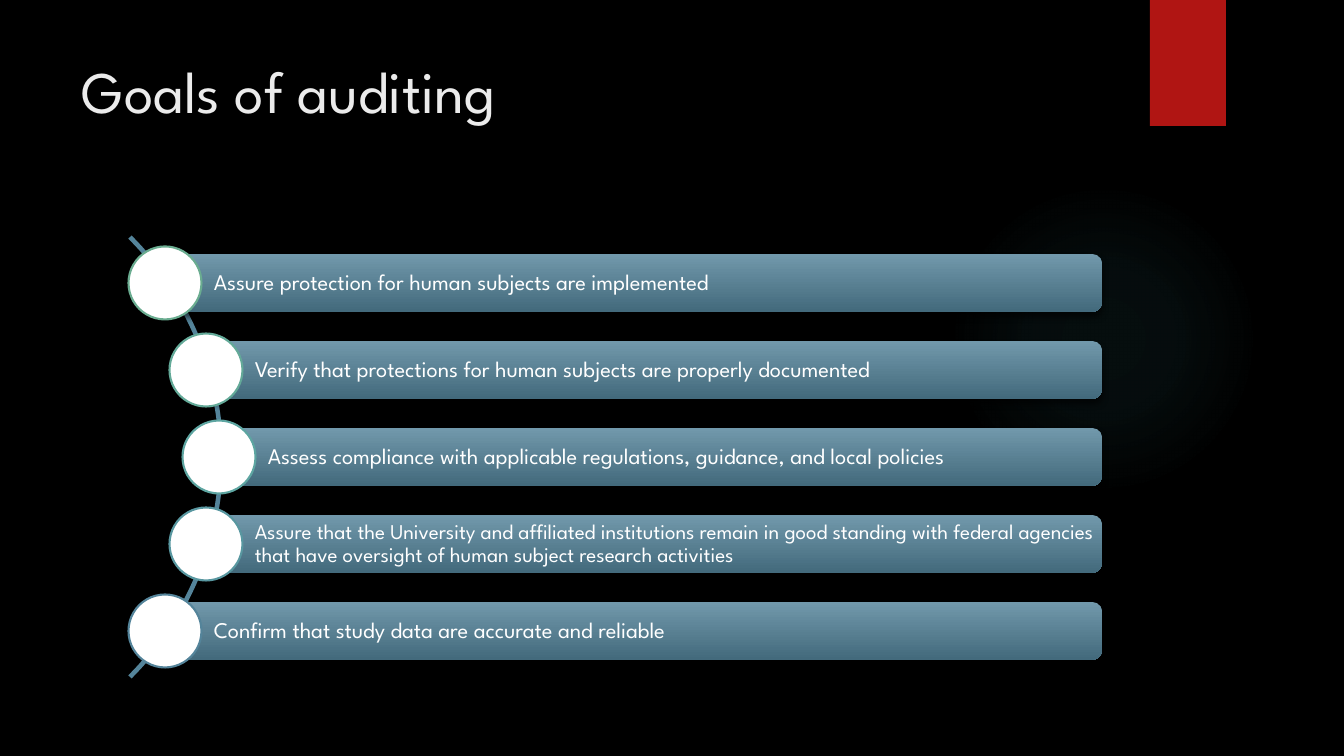
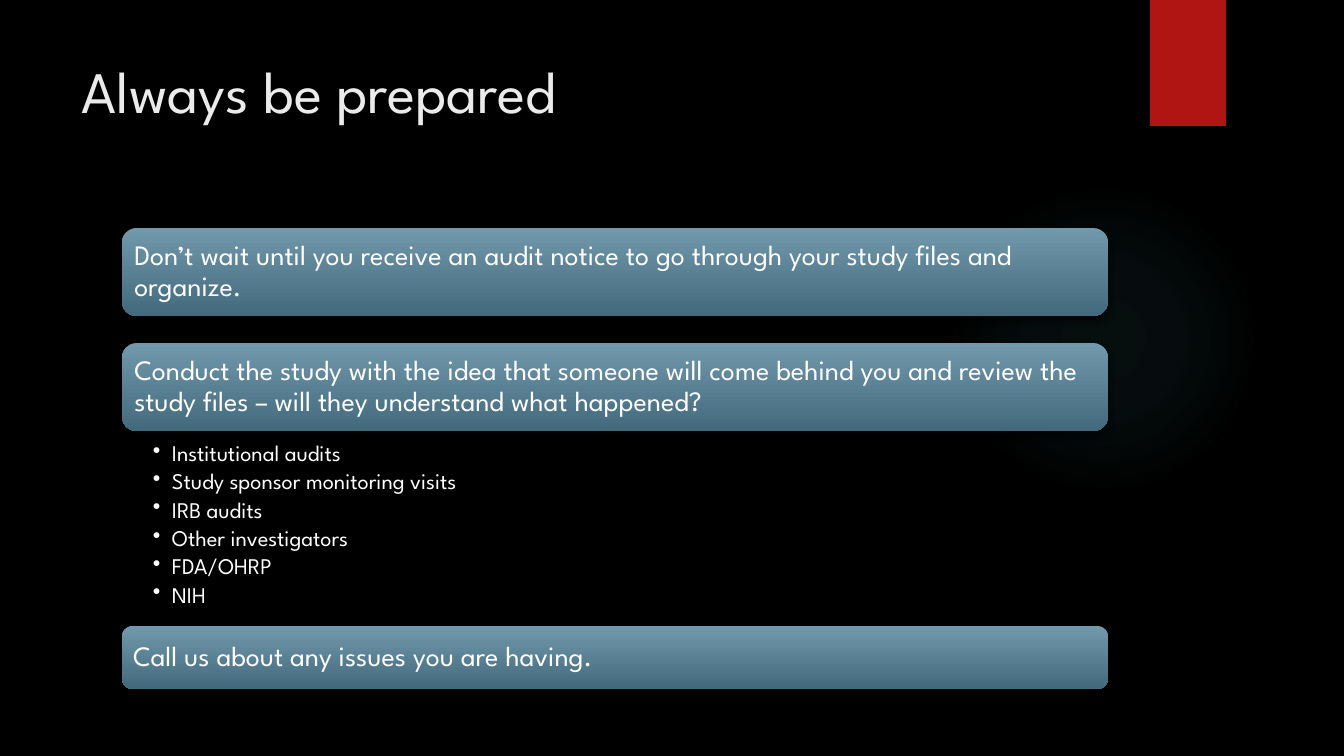
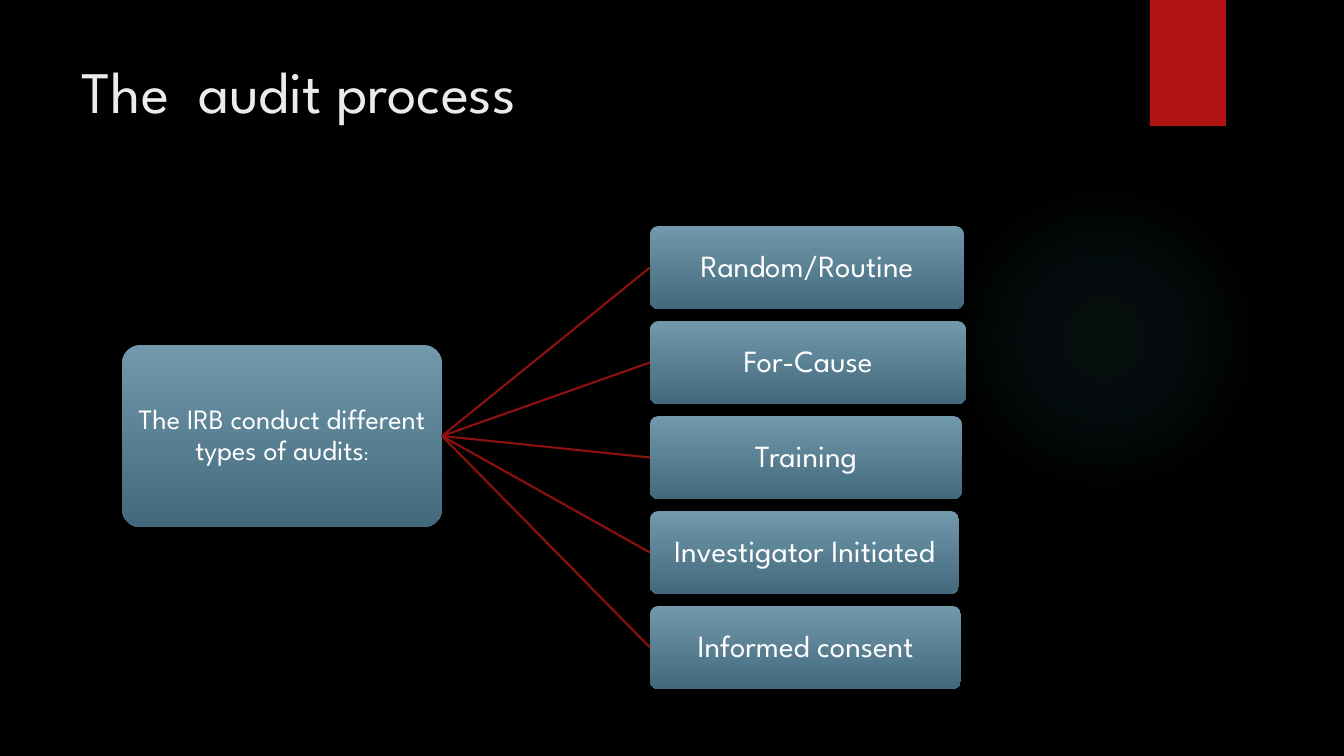
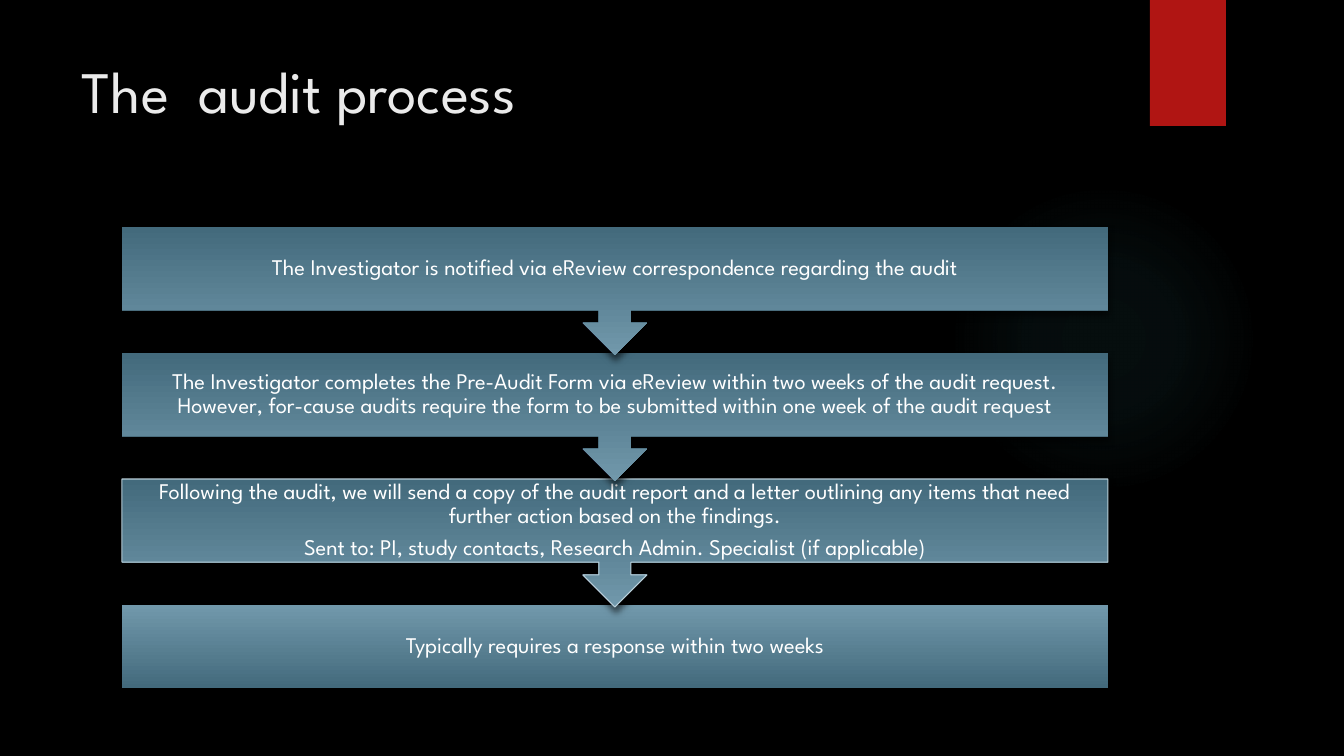
from math import cos, radians, sin, sqrt

from pptx import Presentation
from pptx.dml.color import RGBColor
from pptx.enum.shapes import MSO_CONNECTOR, MSO_SHAPE
from pptx.enum.text import MSO_ANCHOR, PP_ALIGN
from pptx.oxml import parse_xml
from pptx.oxml.ns import nsdecls, qn
from pptx.util import Pt

EMU_PER_PX = 914400 / 100.8
FONT = "League Spartan"
BLACK, WHITE, TITLE_GREY = "000000", "FFFFFF", "EBEBEB"
RED, DARK_RED = "B01513", "8D110F"
LIGHT_BLUE, DARK_BLUE, ARC_BLUE, PALE_BLUE = "7198AB", "436A7C", "54849A", "B9CFD9"
GLOW, GLOW_STOPS = "50B9C1", [(0, 7), (36, 6), (69, 0)]
LEFT, CENTER = PP_ALIGN.LEFT, PP_ALIGN.CENTER
TOP, MIDDLE = MSO_ANCHOR.TOP, MSO_ANCHOR.MIDDLE
RECTANGLE, ROUNDED = MSO_SHAPE.RECTANGLE, MSO_SHAPE.ROUNDED_RECTANGLE
OVAL, CALLOUT = MSO_SHAPE.OVAL, MSO_SHAPE.DOWN_ARROW_CALLOUT
STRAIGHT = MSO_CONNECTOR.STRAIGHT
CONTENT_LEFT, CONTENT_WIDTH = 122, 986


def px(value):
    return round(value * EMU_PER_PX)


def rgb(value):
    return RGBColor.from_string(value)


def set_line(shape, color, width):
    if color:
        shape.line.color.rgb = rgb(color)
        shape.line.width = Pt(width)
    else:
        shape.line.fill.background()


def add_shadow(shape, alpha, blur, distance):
    effects = shape._element.spPr.find(qn("a:effectLst"))
    effects.append(parse_xml(
        f'<a:outerShdw {nsdecls("a")} blurRad="{Pt(blur)}" dist="{Pt(distance)}" '
        f'dir="5400000" rotWithShape="0"><a:srgbClr val="{BLACK}">'
        f'<a:alpha val="{alpha * 1000}"/></a:srgbClr></a:outerShdw>'))


def add_figure(page, kind, left, top, width, height, fill=None, line=None, line_width=1.5):
    shape = page.shapes.add_shape(kind, px(left), px(top), px(width), px(height))
    shape.shadow.inherit = False
    if fill:
        shape.fill.solid()
        shape.fill.fore_color.rgb = rgb(fill)
    else:
        shape.fill.background()
    set_line(shape, line, line_width)
    return shape


def add_panel(page, kind, left, top, width, height,
              colors=(LIGHT_BLUE, DARK_BLUE), corner=None, line=None):
    panel = add_figure(page, kind, left, top, width, height, line=line, line_width=0.75)
    panel.fill.gradient()
    panel.fill.gradient_angle = 270
    for stop, color in zip(panel.fill.gradient_stops, colors):
        stop.color.rgb = rgb(color)
    if corner:
        panel.adjustments[0] = corner
    add_shadow(panel, 60, 5, 3)
    return panel


def add_bullet(para, indent):
    properties = para._p.get_or_add_pPr()
    properties.set("marL", str(px(indent)))
    properties.set("indent", str(-px(indent)))
    properties.append(parse_xml(f'<a:buChar {nsdecls("a")} char="•"/>'))


def write(shape, paragraphs, size=16, color=WHITE, align=LEFT, anchor=MIDDLE,
          insets=(0, 0, 0, 0), spacing=0.9, after=0, bullet_indent=0):
    frame = shape.text_frame
    frame.word_wrap = True
    frame.vertical_anchor = anchor
    frame.margin_left, frame.margin_top, frame.margin_right, frame.margin_bottom = map(px, insets)
    for index, content in enumerate(paragraphs):
        para = frame.add_paragraph() if index else frame.paragraphs[0]
        if bullet_indent:
            add_bullet(para, bullet_indent)
        para.alignment = align
        para.line_spacing = spacing
        para.space_after = Pt(after if index < len(paragraphs) - 1 else 0)
        spans = [(content, size)] if isinstance(content, str) else content
        for text, span_size in spans:
            span = para.add_run()
            span.text = text
            span.font.name = FONT
            span.font.size = Pt(span_size)
            span.font.color.rgb = rgb(color)


def add_text(page, left, top, width, height, paragraphs, **style):
    box = page.shapes.add_textbox(px(left), px(top), px(width), px(height))
    write(box, paragraphs, **style)


def add_glow(page):
    glow = add_figure(page, OVAL, 949, 184, 310, 310)
    stops = "".join(
        f'<a:gs pos="{position * 1000}"><a:srgbClr val="{GLOW}">'
        f'<a:alpha val="{alpha * 1000}"/></a:srgbClr></a:gs>'
        for position, alpha in GLOW_STOPS)
    properties = glow._element.spPr
    properties.replace(properties.find(qn("a:noFill")), parse_xml(
        f'<a:gradFill {nsdecls("a")}><a:gsLst>{stops}</a:gsLst><a:path path="circle">'
        '<a:fillToRect l="50000" t="50000" r="50000" b="50000"/></a:path></a:gradFill>'))


def add_page(deck, title):
    page = deck.slides.add_slide(deck.slide_layouts[6])
    add_glow(page)
    ribbon = add_figure(page, RECTANGLE, 1150, 0, 76, 126, RED)
    add_shadow(ribbon, 45, 3, 2)
    add_text(page, 72, 50, 1037, 154, [title], size=42, color=TITLE_GREY,
             anchor=TOP, insets=(10, 5, 10, 5), spacing=1.0)
    return page


def add_arc(page, center_x, center_y, radius):
    points = [(px(center_x + radius * cos(radians(angle))),
               px(center_y + radius * sin(radians(angle)))) for angle in range(-45, 46)]
    builder = page.shapes.build_freeform(*points[0])
    builder.add_line_segments(points[1:], close=False)
    arc = builder.convert_to_shape()
    arc.shadow.inherit = False
    arc.fill.background()
    set_line(arc, ARC_BLUE, 3.25)


def build_goals(deck):
    page = add_page(deck, "Goals of auditing")
    goals = [
        ("Assure protection for human subjects are implemented", 16, "6AAC90"),
        ("Verify that protections for human subjects are properly documented", 16, "63A998"),
        ("Assess compliance with applicable regulations, guidance, and local policies",
         16, "5DA5A1"),
        ("Assure that the University and affiliated institutions remain in good standing with "
         "federal agencies that have oversight of human subject research activities",
         15, "5897A0"),
        ("Confirm that study data are accurate and reliable", 16, ARC_BLUE),
    ]
    center_x, center_y, radius, pitch = -90, 457, 309, 87
    bar_right, bar_height, dot = 1102, 58, 73
    add_arc(page, center_x, center_y, radius + 2)
    for index, (goal, size, color) in enumerate(goals):
        offset = pitch * (index - 2)
        x = center_x + round(sqrt(radius ** 2 - offset ** 2))
        y = center_y + offset
        bar = add_panel(page, ROUNDED, x, y - bar_height / 2, bar_right - x, bar_height)
        write(bar, [goal], size=size, insets=(46, 4, 4, 4))
        add_figure(page, OVAL, x - dot / 2, y - dot / 2, dot, dot, WHITE, color)


def build_preparation(deck):
    page = add_page(deck, "Always be prepared")
    advice = [
        (228, 88, "Don’t wait until you receive an audit notice to go through your study "
                  "files and organize."),
        (343, 88, "Conduct the study with the idea that someone will come behind you and "
                  "review the study files – will they understand what happened?"),
        (626, 63, "Call us about any issues you are having."),
    ]
    for top, height, text in advice:
        panel = add_panel(page, ROUNDED, CONTENT_LEFT, top, CONTENT_WIDTH, height)
        write(panel, [text], size=20, insets=(8, 8, 8, 8))
    reviewers = ["Institutional audits", "Study sponsor monitoring visits", "IRB audits",
                 "Other investigators", "FDA/OHRP", "NIH"]
    add_text(page, CONTENT_LEFT, 439, CONTENT_WIDTH, 186, reviewers, anchor=TOP,
             insets=(31, 3, 16, 3), after=3, bullet_indent=19)


def build_audit_types(deck):
    page = add_page(deck, "The  audit process")
    root = add_panel(page, ROUNDED, CONTENT_LEFT, 345, 320, 182, corner=0.1)
    write(root, [[("The IRB conduct different types of audits", 20), (":", 13)]],
          align=CENTER, insets=(1, 1, 1, 1))
    audit_types = [("Random/Routine", 314), ("For-Cause", 316), ("Training", 312),
                   ("Investigator Initiated", 309), ("Informed consent", 311)]
    for index, (name, width) in enumerate(audit_types):
        branch = add_panel(page, ROUNDED, 650, 226 + 95 * index, width, 83, corner=0.1)
        write(branch, [name], size=22, align=CENTER, insets=(2, 2, 2, 2))
        link = page.shapes.add_connector(STRAIGHT, 0, 0, 0, 0)
        link.begin_connect(root, 3)
        link.end_connect(branch, 1)
        set_line(link, DARK_RED, 1.5)
        link._element.spPr.append(parse_xml(f'<a:effectLst {nsdecls("a")}/>'))


def build_audit_steps(deck):
    page = add_page(deck, "The  audit process")
    steps = [
        (["The Investigator is notified via eReview correspondence regarding the audit"], None),
        (["The Investigator completes the Pre-Audit Form via eReview within two weeks of the "
          "audit request. However, for-cause audits require the form to be submitted within "
          "one week of the audit request"], None),
        (["Following the audit, we will send a copy of the audit report and a letter outlining "
          "any items that need further action based on the findings.",
          "Sent to: PI, study contacts, Research Admin. Specialist (if applicable)"], PALE_BLUE),
        (["Typically requires a response within two weeks"], None),
    ]
    last = len(steps) - 1
    for index, (paragraphs, line) in reversed(list(enumerate(steps))):
        if index == last:
            kind, height, colors = RECTANGLE, 83, (LIGHT_BLUE, DARK_BLUE)
        else:
            kind, height, colors = CALLOUT, 128, (DARK_BLUE, LIGHT_BLUE)
        step = add_panel(page, kind, CONTENT_LEFT, 227 + 126 * index, CONTENT_WIDTH, height,
                         colors=colors, line=line)
        write(step, paragraphs, align=CENTER, insets=(12, 0, 12, 0), after=5.5)


def main():
    deck = Presentation()
    deck.slide_width, deck.slide_height = px(1344), px(756)
    background = deck.slide_master.background.fill
    background.solid()
    background.fore_color.rgb = rgb(BLACK)
    build_goals(deck)
    build_preparation(deck)
    build_audit_types(deck)
    build_audit_steps(deck)
    deck.save("out.pptx")


if __name__ == "__main__":
    main()
